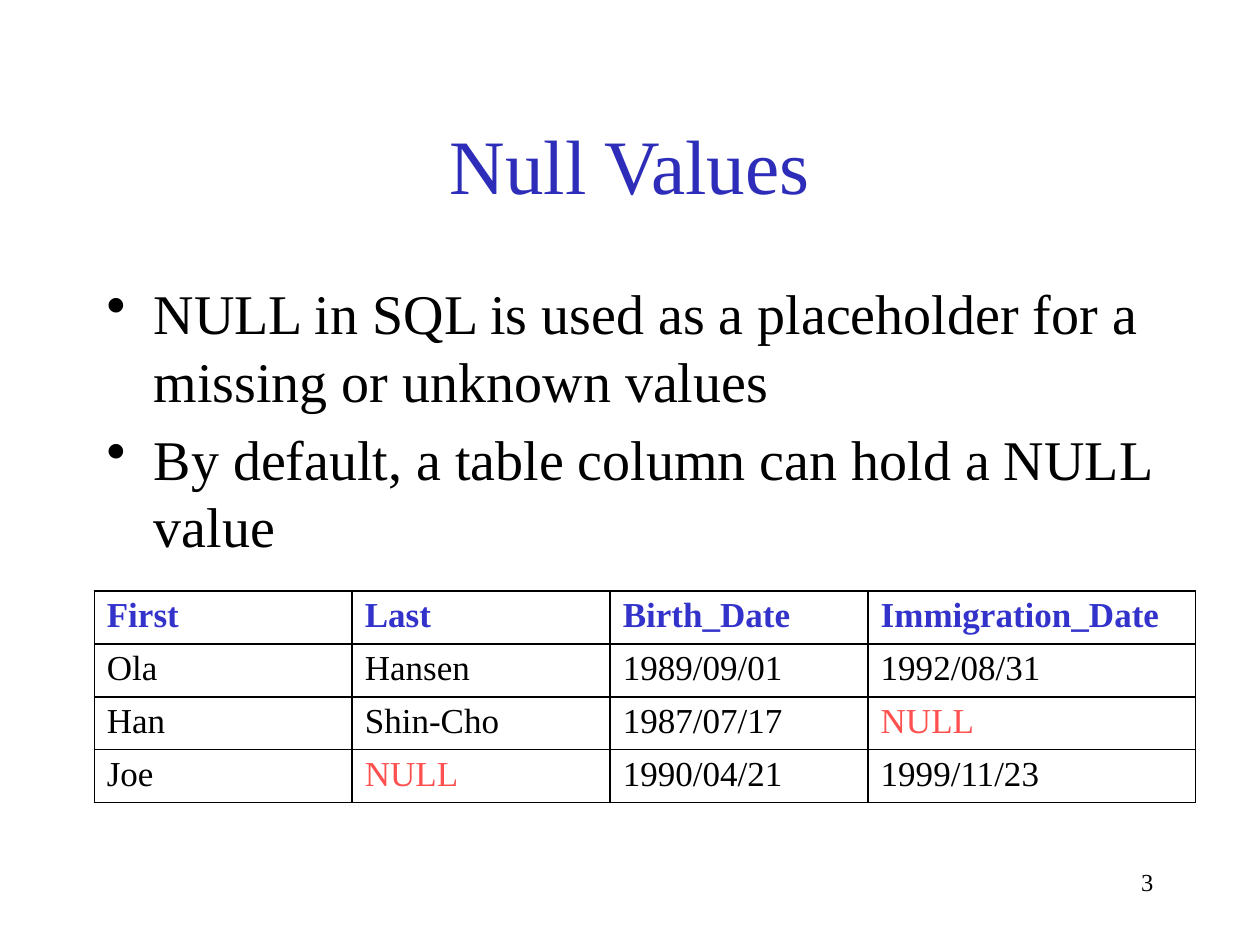
import pptx
import pptx.util
import pptx.dml.color
import pptx.enum.text
import pptx.oxml
import pptx.oxml.ns

Cm, Pt = pptx.util.Cm, pptx.util.Pt
Align = pptx.enum.text.PP_ALIGN
Anchor = pptx.enum.text.MSO_ANCHOR


class Theme:
    font = "Times New Roman"
    ink, title, head, null = "000000", "2D2DB9", "3333CC", "FF5050"
    title_size, body_size, cell_size, page_size = 44, 32, 20, 14


class Deck:
    def __init__(self, theme):
        self.theme = theme
        self.prs = pptx.Presentation()
        self.prs.slide_width, self.prs.slide_height = Cm(25.4), Cm(19.05)
        self.slide = self.prs.slides.add_slide(self.prs.slide_layouts[5])

    def style(self, para, size, color, bold=False):
        for run in para.runs:
            run.font.name = self.theme.font
            run.font.size = Pt(size)
            run.font.bold = bold
            run.font.color.rgb = pptx.dml.color.RGBColor.from_string(color)

    def title(self, text, left, top, width, height):
        shape = self.slide.shapes.title
        shape.left, shape.top = Cm(left), Cm(top)
        shape.width, shape.height = Cm(width), Cm(height)
        frame = shape.text_frame
        frame.text = text
        frame.vertical_anchor = Anchor.MIDDLE
        para = frame.paragraphs[0]
        para.alignment = Align.CENTER
        self.style(para, self.theme.title_size, self.theme.title)

    def text(self, text, size, left, top, width, height, align=Align.LEFT):
        box = self.slide.shapes.add_textbox(Cm(left), Cm(top), Cm(width), Cm(height))
        frame = box.text_frame
        frame.word_wrap = True
        frame.text = text
        for para in frame.paragraphs:
            para.alignment = align
            self.style(para, size, self.theme.ink)
        return frame

    def bullets(self, items, left, top, width, height, indent=0.95):
        size = self.theme.body_size
        frame = self.text("\n".join(items), size, left, top, width, height)
        for para in frame.paragraphs:
            para.space_before = Pt(0.2 * size)
            props = para._p.get_or_add_pPr()
            props.set("marL", str(Cm(indent)))
            props.set("indent", str(-Cm(indent)))
            mark = pptx.oxml.ns.qn("a:buChar")
            props.append(props.makeelement(mark, {"char": "•"}))

    def border(self, cell, width=1):
        props = cell._tc.get_or_add_tcPr()
        space = pptx.oxml.ns.nsdecls("a")
        for side in "LRTB":
            props.append(pptx.oxml.parse_xml(
                f'<a:ln{side} {space} w="{Pt(width)}"><a:solidFill>'
                f'<a:srgbClr val="{self.theme.ink}"/></a:solidFill></a:ln{side}>'))

    def table(self, rows, widths, left, top, height):
        theme = self.theme
        grid = self.slide.shapes.add_table(
            len(rows), len(widths), Cm(left), Cm(top),
            Cm(sum(widths)), Cm(height * len(rows))).table
        grid.first_row = grid.horz_banding = False
        for col, width in zip(grid.columns, widths):
            col.width = Cm(width)
        for r, row in enumerate(rows):
            grid.rows[r].height = Cm(height)
            for c, value in enumerate(row):
                cell = grid.cell(r, c)
                cell.margin_top = cell.margin_bottom = Cm(0.11)
                cell.text_frame.text = value
                color = theme.null if value == "NULL" else theme.ink
                if r == 0:
                    color = theme.head
                self.style(cell.text_frame.paragraphs[0],
                           theme.cell_size, color, bold=r == 0)
                self.border(cell)
                cell.fill.background()


def main():
    deck = Deck(Theme())
    edge, width = 1.9, 21.6

    # Title and main points
    deck.title("Null Values", edge, 1.7, width, 3.18)
    deck.bullets([
        "NULL in SQL is used as a placeholder for a missing or unknown values",
        "By default, a table column can hold a NULL value",
    ], edge, 5.5, width, 11.43)

    # Sample rows with missing values
    deck.table([
        ["First", "Last", "Birth_Date", "Immigration_Date"],
        ["Ola", "Hansen", "1989/09/01", "1992/08/31"],
        ["Han", "Shin-Cho", "1987/07/17", "NULL"],
        ["Joe", "NULL", "1990/04/21", "1999/11/23"],
    ], [5.2, 5.2, 5.2, 6.6], edge, 11.91, 1.04)

    # Page number
    deck.text("3", deck.theme.page_size, 18.2, 17.35, 5.3, 1.27, Align.RIGHT)

    deck.prs.save("out.pptx")


if __name__ == "__main__":
    main()
